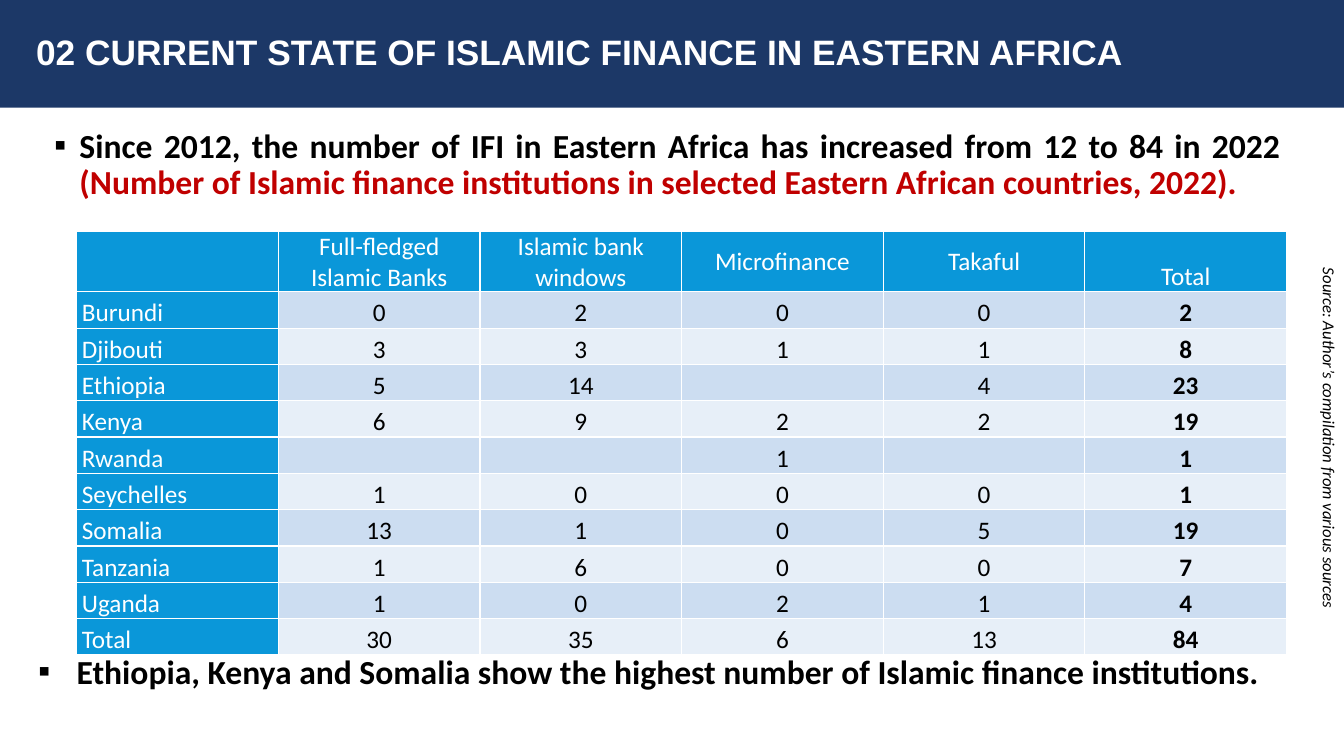
"""Build the slide on Islamic finance institutions in Eastern Africa."""
from dataclasses import dataclass

from lxml.etree import SubElement as Sub
from pptx import Presentation
from pptx.dml.color import RGBColor as Rgb
from pptx.enum.shapes import MSO_SHAPE as Shape
from pptx.enum.text import MSO_ANCHOR as Anchor, PP_ALIGN as Align
from pptx.oxml.ns import qn
from pptx.util import Pt


@dataclass(frozen=True)
class Theme:
    navy: str = "1C3867"
    blue: str = "0A97D9"
    dark: str = "CCDDF1"
    light: str = "E7EFF8"
    white: str = "FFFFFF"
    black: str = "000000"
    red: str = "C00000"
    head: float = 25.2
    body: float = 24
    cell: float = 18
    note: float = 12


theme = Theme()


def write(frame, *texts, size, inks=(theme.black,), font="Calibri", bold=False,
          italic=False, align=Align.LEFT, anchor=Anchor.TOP, pad=(7.2, 3.6),
          line=None, after=0, indent=None):
    """Write one paragraph, one run per text, each in its own ink."""
    frame.word_wrap = True
    frame.vertical_anchor = anchor
    frame.margin_left = frame.margin_right = Pt(pad[0])
    frame.margin_top = frame.margin_bottom = Pt(pad[1])
    para = frame.paragraphs[0]
    if indent:
        props = para._p.get_or_add_pPr()
        props.set("marL", str(Pt(indent[0])))
        props.set("indent", str(Pt(indent[1])))
        Sub(props, qn("a:buFont"), typeface="Calibri")
        Sub(props, qn("a:buChar"), char="▪")
    para.alignment = align
    para.space_after = Pt(after)
    if line:
        para.line_spacing = line
    para.font.size = Pt(size)
    for text, ink in zip(texts, inks):
        run = para.add_run()
        run.text = text
        run.font.name = font
        run.font.size = Pt(size)
        run.font.bold = bold
        run.font.italic = italic
        run.font.color.rgb = Rgb.from_string(ink)


def edge(cell):
    """Draw thin white borders round a table cell."""
    props = cell._tc.get_or_add_tcPr()
    for at, side in enumerate(("a:lnL", "a:lnR", "a:lnT", "a:lnB")):
        ln = Sub(props, qn(side), w=str(Pt(1)))
        Sub(Sub(ln, qn("a:solidFill")), qn("a:srgbClr"), val=theme.white)
        props.insert(at, ln)


deck = Presentation()
deck.slide_width, deck.slide_height = Pt(960), Pt(540)
slide = deck.slides.add_slide(deck.slide_layouts[6])
shapes = slide.shapes

banner = shapes.add_shape(Shape.RECTANGLE, 0, 0, Pt(960), Pt(77))
banner.shadow.inherit = False
banner.fill.solid()
banner.fill.fore_color.rgb = Rgb.from_string(theme.navy)
banner.line.fill.background()

title = shapes.add_textbox(Pt(18.7), Pt(8), Pt(929.5), Pt(61.2))
write(title.text_frame, "02 CURRENT STATE OF ISLAMIC FINANCE IN EASTERN AFRICA",
      size=theme.head, inks=[theme.white], font="Arial", bold=True,
      anchor=Anchor.MIDDLE, line=0.9)

intro = shapes.add_textbox(Pt(15.1), Pt(88.6), Pt(907.2), Pt(73.4))
write(intro.text_frame,
      "Since 2012, the number of IFI in Eastern Africa has increased from 12 to 84 in 2022 ",
      "(Number of Islamic finance institutions in selected Eastern African countries, 2022).",
      size=theme.body, inks=[theme.black, theme.red], bold=True,
      align=Align.JUSTIFY, line=0.9, after=6, indent=(34.6, -18))

source = shapes.add_textbox(Pt(820.1), Pt(303.1), Pt(259.2), Pt(21.6))
source.rotation = 90
write(source.text_frame, "Source: Author’s compilation from various sources",
      size=theme.note, italic=True)

close = shapes.add_textbox(Pt(20.2), Pt(465.1), Pt(907.2), Pt(43.2))
write(close.text_frame,
      "Ethiopia, Kenya and Somalia show the highest number of Islamic finance institutions.",
      size=theme.body, bold=True, align=Align.JUSTIFY, pad=(0, 0), after=6,
      indent=(34.6, -27.4))

data = [
    ["", "Full-fledged Islamic Banks", "Islamic bank windows",
     "Microfinance", "Takaful", "Total"],
    ["Burundi", "0", "2", "0", "0", "2"],
    ["Djibouti", "3", "3", "1", "1", "8"],
    ["Ethiopia", "5", "14", "", "4", "23"],
    ["Kenya", "6", "9", "2", "2", "19"],
    ["Rwanda", "", "", "1", "", "1"],
    ["Seychelles", "1", "0", "0", "0", "1"],
    ["Somalia", "13", "1", "0", "5", "19"],
    ["Tanzania", "1", "6", "0", "0", "7"],
    ["Uganda", "1", "0", "2", "1", "4"],
    ["Total", "30", "35", "6", "13", "84"],
]
last = len(data[0]) - 1
table = shapes.add_table(len(data), len(data[0]), Pt(54.9), Pt(165.2),
                         Pt(864), Pt(302)).table
table.first_row = table.horz_banding = False
for col in table.columns:
    col.width = Pt(144)
for r, row in enumerate(data):
    table.rows[r].height = Pt(25.9 if r else 43)
    for c, text in enumerate(row):
        cell = table.cell(r, c)
        key = r == 0 or c == 0
        fill = theme.blue if key else theme.dark if r % 2 else theme.light
        cell.fill.solid()
        cell.fill.fore_color.rgb = Rgb.from_string(fill)
        edge(cell)
        write(cell.text_frame, *([text] if text else []), size=theme.cell,
              inks=[theme.white if key else theme.black],
              bold=r > 0 and c == last, align=Align.CENTER if c else Align.LEFT,
              line=1.2 if r else None)
        cell.margin_left = cell.margin_right = Pt(3.6)
        cell.margin_top = cell.margin_bottom = 0
        cell.vertical_anchor = Anchor.BOTTOM if c in (0, last) else Anchor.MIDDLE

deck.save("out.pptx")
